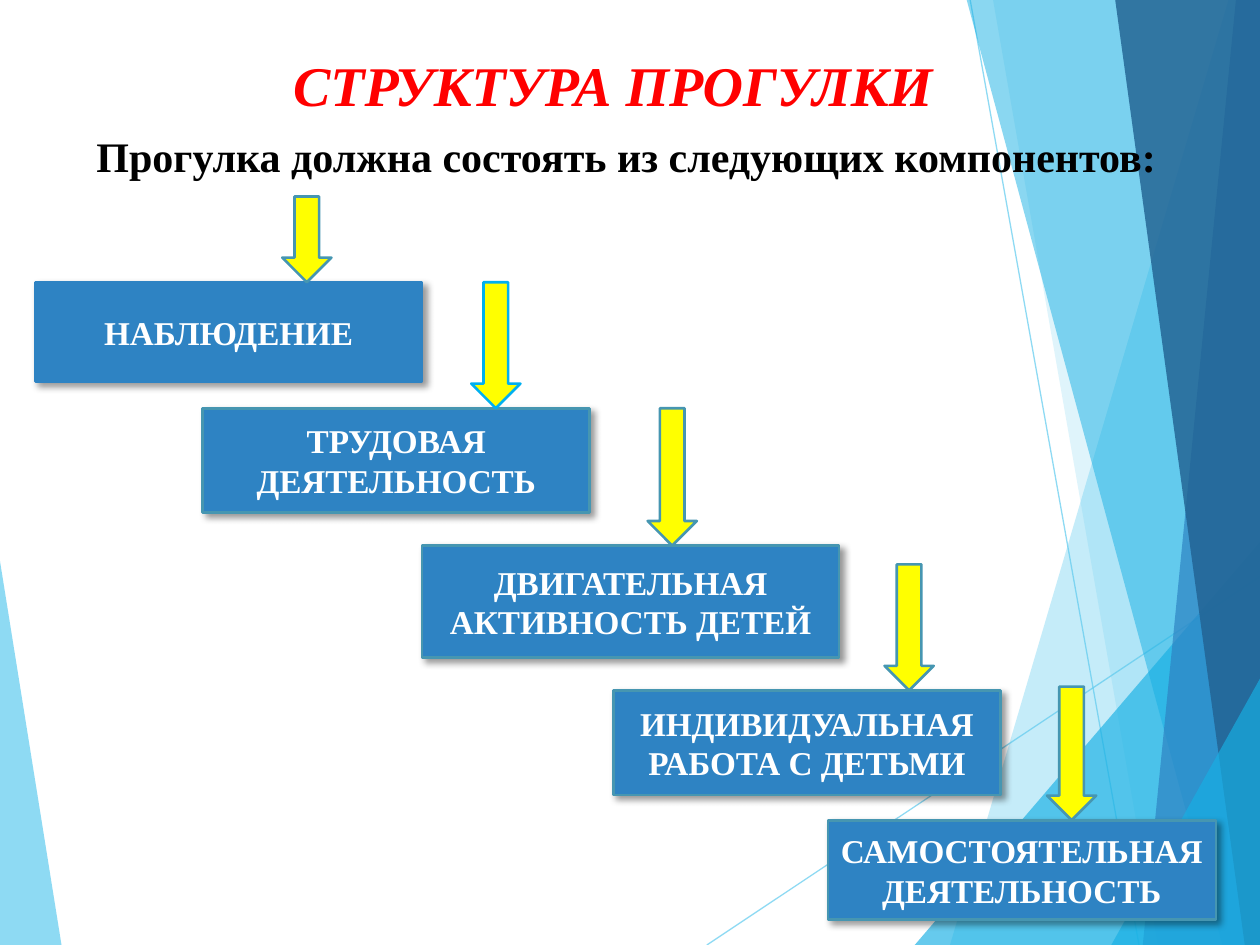
import dataclasses

import lxml.etree
import pptx
import pptx.dml.color
import pptx.enum.shapes
import pptx.enum.text
import pptx.oxml.ns
import pptx.util

Inches = pptx.util.Inches
qn = pptx.oxml.ns.qn
SHAPES = pptx.enum.shapes.MSO_SHAPE


@dataclasses.dataclass(frozen=True)
class Theme:
    font: str = "Times New Roman"
    sky: str = "5FCBEF"
    azure: str = "17B0E4"
    blue: str = "2E83C3"
    navy: str = "226292"
    teal: str = "4696B1"
    bright: str = "00B0F0"
    yellow: str = "FFFF00"
    red: str = "FF0000"
    black: str = "000000"
    white: str = "FFFFFF"
    title_size: float = 32
    lead_size: float = 24
    step_size: float = 19
    outline: float = 1.5
    hairline: float = 0.75


class SlideBuilder:
    def __init__(self, slide, theme):
        self.slide = slide
        self.theme = theme

    def color(self, value):
        return pptx.dml.color.RGBColor.from_string(value)

    def set_alpha(self, element, percent):
        for color in element.iter(qn("a:srgbClr")):
            lxml.etree.SubElement(color, qn("a:alpha"), val=str(percent * 1000))

    def add_text(self, frame, text, size, color, italic=None):
        frame.word_wrap = True
        paragraph = frame.paragraphs[0]
        paragraph.alignment = pptx.enum.text.PP_ALIGN.CENTER
        run = paragraph.add_run()
        run.text = text
        font = run.font
        font.name, font.size = self.theme.font, pptx.util.Pt(size)
        font.bold, font.italic = True, italic
        font.color.rgb = self.color(color)

    def facet(self, points, color, opacity):
        corners = [(Inches(x), Inches(y)) for x, y in points]
        outline = self.slide.shapes.build_freeform(*corners[0], scale=1.0)
        outline.add_line_segments(corners[1:], close=True)
        facet = outline.convert_to_shape()
        facet.shadow.inherit = False
        facet.fill.solid()
        facet.fill.fore_color.rgb = self.color(color)
        self.set_alpha(facet._element.spPr, opacity)
        facet.line.fill.background()

    def ray(self, start, end, color, opacity):
        ray = self.slide.shapes.add_connector(
            pptx.enum.shapes.MSO_CONNECTOR.STRAIGHT,
            *[Inches(value) for value in (*start, *end)])
        ray.line.width = pptx.util.Pt(self.theme.hairline)
        ray.line.color.rgb = self.color(color)
        properties = ray._element.spPr
        self.set_alpha(properties, opacity)
        lxml.etree.SubElement(properties, qn("a:effectLst"))

    def preset(self, kind, box, fill, line):
        shape = self.slide.shapes.add_shape(kind, *map(Inches, box))
        shape.shadow.inherit = False
        shape.fill.solid()
        shape.fill.fore_color.rgb = self.color(fill)
        shape.line.color.rgb = self.color(line)
        shape.line.width = pptx.util.Pt(self.theme.outline)
        return shape

    def step(self, text, box, line):
        step = self.preset(SHAPES.RECTANGLE, box, self.theme.blue, line)
        effects = step._element.spPr.find(qn("a:effectLst"))
        shadow = lxml.etree.SubElement(
            effects, qn("a:outerShdw"), blurRad=str(pptx.util.Pt(4)),
            dist=str(pptx.util.Pt(3)), dir="2700000", algn="tl", rotWithShape="0")
        lxml.etree.SubElement(shadow, qn("a:srgbClr"), val=self.theme.black)
        self.set_alpha(shadow, 40)
        step.text_frame.vertical_anchor = pptx.enum.text.MSO_ANCHOR.MIDDLE
        self.add_text(step.text_frame, text, self.theme.step_size, self.theme.white)

    def arrow(self, left, top, bottom, line):
        self.preset(SHAPES.DOWN_ARROW, (left, top, 0.39, bottom - top),
                    self.theme.yellow, line)

    def title(self, text, box):
        title = self.slide.shapes.title
        title.left, title.top, title.width, title.height = map(Inches, box)
        title.text_frame.vertical_anchor = pptx.enum.text.MSO_ANCHOR.TOP
        title.text_frame.auto_size = pptx.enum.text.MSO_AUTO_SIZE.SHAPE_TO_FIT_TEXT
        self.add_text(title.text_frame, text, self.theme.title_size,
                      self.theme.red, italic=True)

    def lead(self, text, box):
        lead = self.slide.shapes.add_textbox(*map(Inches, box))
        lead.text_frame.auto_size = pptx.enum.text.MSO_AUTO_SIZE.SHAPE_TO_FIT_TEXT
        self.add_text(lead.text_frame, text, self.theme.lead_size, self.theme.black)


def main():
    theme = Theme()
    presentation = pptx.Presentation()
    presentation.slide_width, presentation.slide_height = Inches(10), Inches(7.5)
    slide = presentation.slides.add_slide(presentation.slide_layouts[5])
    builder = SlideBuilder(slide, theme)

    builder.facet([(-0.01, 4.39), (0.49, 7.51), (-0.01, 7.5)], theme.sky, 70)
    builder.ray((5.61, 7.5), (10.01, 4.57), theme.sky, 70)
    builder.ray((7.7, 0), (9.04, 7.5), theme.sky, 70)

    right, top, bottom = 10.01, -0.01, 7.5
    right_facets = [
        ([(9.75, 0), (7.54, bottom), (right, bottom), (right, 0)], theme.sky, 36),
        ([(7.88, top), (9.19, bottom), (right, bottom), (right, top)], theme.sky, 20),
        ([(7.26, bottom), (right, 4.29), (right, bottom)], theme.azure, 66),
        ([(7.67, top), (9.7, bottom), (right, bottom), (right, top)], theme.azure, 50),
        ([(9.81, top), (9.07, bottom), (right, bottom), (right, top)], theme.blue, 70),
        ([(8.85, top), (9.88, bottom), (right, bottom), (right, top)], theme.navy, 82),
        ([(8.82, bottom), (10.02, 5.35), (10.02, bottom)], theme.azure, 66),
    ]
    for points, color, opacity in right_facets:
        builder.facet(points, color, opacity)

    steps = [
        ("НАБЛЮДЕНИЕ", (0.28, 2.24, 3.07, 0.79), theme.blue,
         (2.24, 1.56), theme.teal),
        ("ТРУДОВАЯ ДЕЯТЕЛЬНОСТЬ", (1.61, 3.24, 3.07, 0.83), theme.teal,
         (3.74, 2.24), theme.bright),
        ("ДВИГАТЕЛЬНАЯ АКТИВНОСТЬ ДЕТЕЙ", (3.35, 4.33, 3.31, 0.89), theme.teal,
         (5.14, 3.24), theme.teal),
        ("ИНДИВИДУАЛЬНАЯ РАБОТА С ДЕТЬМИ", (4.87, 5.48, 3.07, 0.83), theme.teal,
         (7.02, 4.48), theme.teal),
        ("САМОСТОЯТЕЛЬНАЯ ДЕЯТЕЛЬНОСТЬ", (6.57, 6.51, 3.08, 0.79), theme.teal,
         (8.31, 5.45), theme.teal),
    ]
    for text, box, border, arrow_start, arrow_border in steps:
        builder.step(text, box, border)
        builder.arrow(*arrow_start, box[1], arrow_border)

    builder.lead("Прогулка должна состоять из следующих компонентов:",
                 (0.28, 0.99, 9.38, 0.5))
    builder.title("СТРУКТУРА ПРОГУЛКИ", (1.85, 0.35, 6.03, 0.64))
    presentation.save("out.pptx")


if __name__ == "__main__":
    main()
